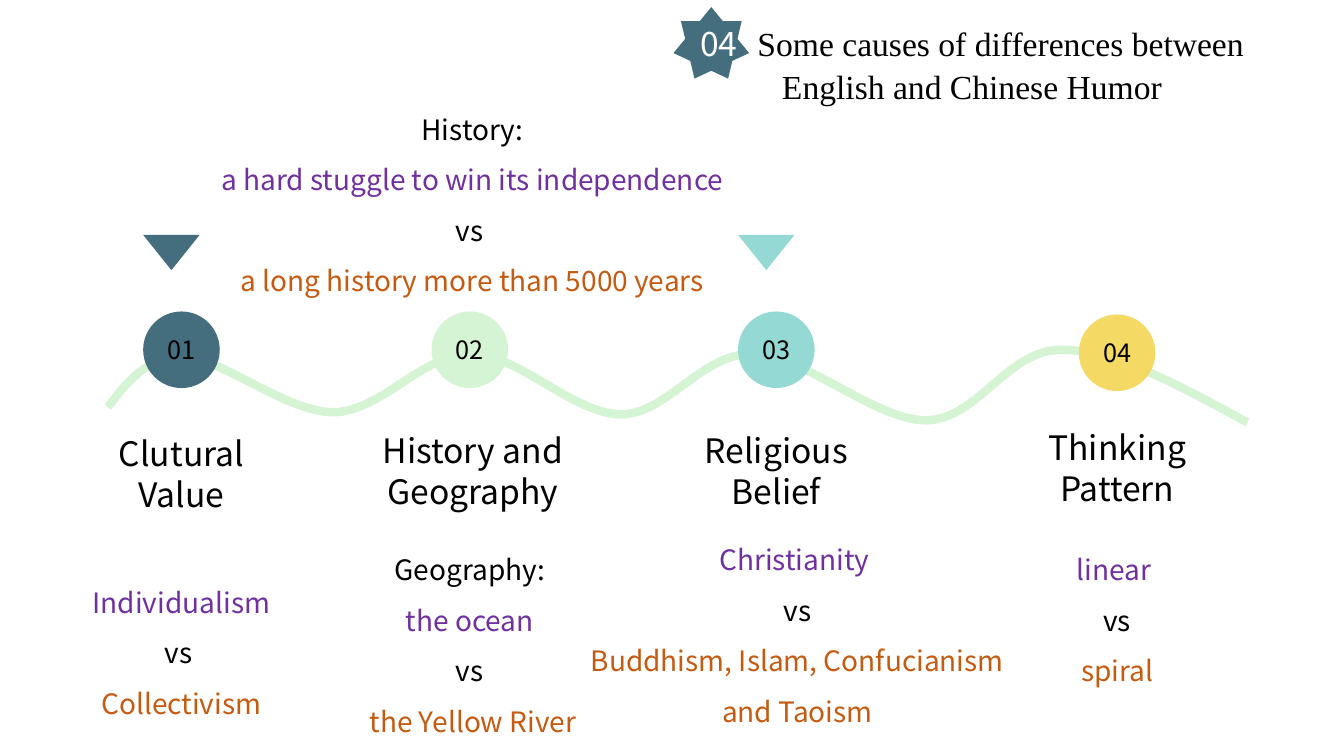
from copy import deepcopy

from pptx import Presentation
from pptx.dml.color import RGBColor
from pptx.enum.shapes import MSO_SHAPE
from pptx.enum.text import MSO_ANCHOR, MSO_AUTO_SIZE, PP_ALIGN
from pptx.oxml.ns import qn
from pptx.util import Inches, Pt

COLORS = {
    "slate": "446E7E", "mint": "D5F4D3", "aqua": "94D9D4", "yellow": "F4D964",
    "ink": "000000", "white": "FFFFFF", "purple": "7030A0", "orange": "C55A11",
}
SANS = "Noto Sans CJK SC"
SERIF = "Times New Roman"
TEXT_FRAME = {"word_wrap": True, "auto_size": MSO_AUTO_SIZE.SHAPE_TO_FIT_TEXT,
              "vertical_anchor": MSO_ANCHOR.TOP}


def add_span(para, text, color="ink", size=20, font=SANS):
    span = para.add_run()
    span.text = text
    for name, value in {"size": Pt(size), "name": font}.items():
        setattr(span.font, name, value)
    span.font.color.rgb = RGBColor.from_string(COLORS[color])
    para.alignment = PP_ALIGN.CENTER
    return span


def add_filled(kind, place, color):
    shape = page.shapes.add_shape(kind, *map(Inches, place))
    shape.shadow.inherit = False
    shape.fill.solid()
    shape.fill.fore_color.rgb = RGBColor.from_string(COLORS[color])
    shape.line.fill.background()
    return shape


deck = Presentation()
deck.slide_width, deck.slide_height = Inches(13.33), Inches(7.5)
page = deck.slides.add_slide(deck.slide_layouts[5])

# Wave: each curve is two control points and an end point
wave_start = (1.07, 4.04)
wave_curves = [
    ((1.26, 3.79), (1.45, 3.54), (1.82, 3.54)),
    ((2.2, 3.55), (2.84, 4.09), (3.31, 4.09)),
    ((3.79, 4.08), (4.19, 3.51), (4.67, 3.51)),
    ((5.14, 3.51), (5.69, 4.11), (6.16, 4.11)),
    ((6.62, 4.11), (6.96, 3.5), (7.47, 3.51)),
    ((7.97, 3.52), (8.68, 4.17), (9.19, 4.17)),
    ((9.7, 4.16), (10, 3.46), (10.53, 3.47)),
    ((11.06, 3.47), (11.71, 3.83), (12.37, 4.19)),
]
builder = page.shapes.build_freeform(*map(Inches, wave_start))
builder.add_line_segments([tuple(map(Inches, end)) for *_, end in wave_curves], close=False)
wave = builder.convert_to_shape()
wave.shadow.inherit = False
wave.fill.background()
wave.line.color.rgb = RGBColor.from_string(COLORS["mint"])
wave.line.width = Pt(6)

# Bend the straight segments into cubic curves
segments = list(wave.element.iter(qn("a:lnTo")))
for segment, (*controls, end) in zip(segments, wave_curves):
    segment.tag = qn("a:cubicBezTo")
    for x, y in controls:
        control = deepcopy(segment[-1])
        control.set("x", str(Inches(x) - wave.left))
        control.set("y", str(Inches(y) - wave.top))
        segment.insert(len(segment) - 1, control)

# Numbered stops on the wave, each with a label
frames = []
stops = [
    (1.42, 3.09, "slate", "Clutural Value", 0.66, 4.25),
    (4.28, 3.09, "mint", "History and Geography", 3.55, 4.22),
    (7.32, 3.09, "aqua", "Religious Belief", 6.56, 4.22),
    (10.7, 3.12, "yellow", "Thinking Pattern", 9.94, 4.19),
]
for number, (left, top, color, label, label_left, label_top) in enumerate(stops, 1):
    circle = add_filled(MSO_SHAPE.OVAL, (left, top, 0.76, 0.76), color)
    circle.text_frame.vertical_anchor = MSO_ANCHOR.MIDDLE
    add_span(circle.text_frame.paragraphs[0], f"{number:02}", size=18)
    box = page.shapes.add_textbox(*map(Inches, (label_left, label_top, 2.28, 0.91)))
    add_span(box.text_frame.paragraphs[0], label, size=24)
    frames.append(box.text_frame)

# Pointers above the first and third stops
for left, color in ((1.42, "slate"), (7.32, "aqua")):
    pointer = add_filled(MSO_SHAPE.ISOSCELES_TRIANGLE, (left, 2.33, 0.56, 0.35), color)
    pointer.rotation = 180

# Title in front of its star
star = add_filled(MSO_SHAPE.STAR_7_POINT, (6.68, 0.07, 0.75, 0.71), "slate")
title = page.shapes.title
title_place = {"left": 6.39, "top": 0.07, "width": 6.5, "height": 1.04}
for name, value in title_place.items():
    setattr(title, name, Inches(value))
star.element.addnext(title.element)
heading = title.text_frame.paragraphs[0]
add_span(heading, "04", "white", 24)
gap = add_span(heading, " ", size=32)
gap.font._element.set("spc", "720")
add_span(heading, "Some causes of differences between English and Chinese Humor",
         size=24, font=SERIF)
frames.append(title.text_frame)

# Comparisons: each paragraph is a list of spans
versus = [("vs", "ink")]
comparisons = [
    ((0.53, 5.59, 2.54, 1.61), [
        [("Individualism", "purple")], [("vs ", "ink")], [("Collectivism", "orange")]]),
    ((1.98, 0.9, 5.41, 2.12), [
        [("History:", "ink")],
        [("a hard stuggle to win its independence", "purple"),
         (" ", "ink", 18), ("vs", "ink"), (" ", "ink", 18)],
        [("a long history more than 5000 years", "orange")]]),
    ((5.73, 5.17, 4.36, 2.12), [
        [("Christianity ", "purple")], versus,
        [("Buddhism, Islam, Confucianism and Taoism", "orange")]]),
    ((9.1, 5.27, 3.96, 1.61), [
        [("linear ", "purple")], versus, [("spiral", "orange")]]),
    ((3.36, 5.27, 2.6, 2.12), [
        [("Geography:", "ink")], [(" the ocean ", "purple")], versus,
        [(" ", "purple"), ("the Yellow River", "orange")]]),
]
for place, paragraphs in comparisons:
    frame = page.shapes.add_textbox(*map(Inches, place)).text_frame
    for index, spans in enumerate(paragraphs):
        para = frame.add_paragraph() if index else frame.paragraphs[0]
        para.line_spacing = 1.5
        for span in spans:
            add_span(para, *span)
    frames.append(frame)

# Shared text frame format
for frame in frames:
    for name, value in TEXT_FRAME.items():
        setattr(frame, name, value)

deck.save("out.pptx")
